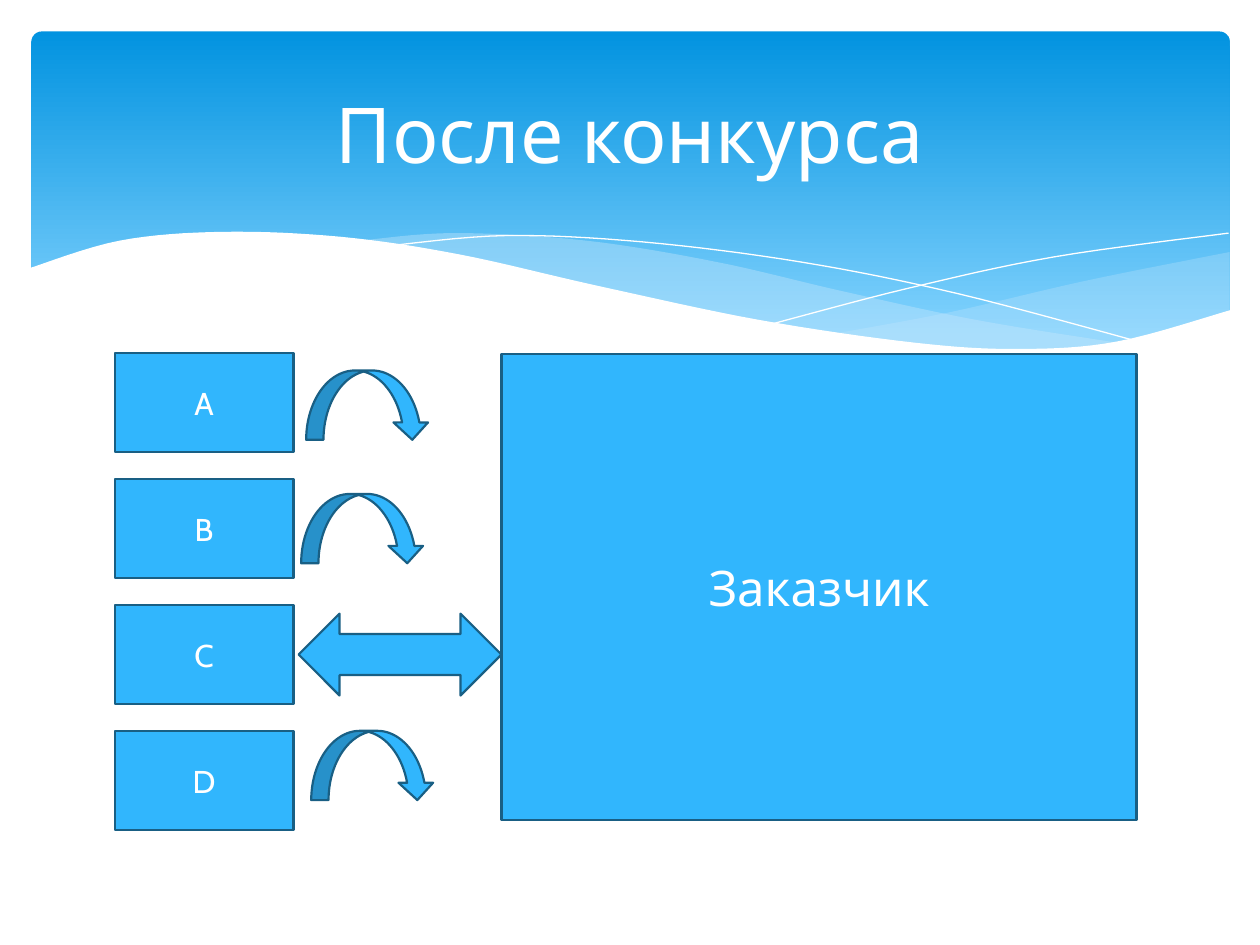
from dataclasses import dataclass
from typing import Optional

from lxml.etree import SubElement as Sub
from pptx import Presentation as Deck
from pptx.dml.color import RGBColor as Rgb
from pptx.enum.shapes import MSO_SHAPE as Kind
from pptx.enum.text import MSO_ANCHOR as Anchor, PP_ALIGN as Align
from pptx.oxml.ns import qn
from pptx.util import Inches, Pt


@dataclass(frozen=True)
class Theme:
    font: str = "Cabin"
    white: str = "FFFFFF"
    fill: str = "31B6FD"
    edge: str = "195F84"
    mist: str = "C6E7FC"
    top: str = "0293E0"
    base: str = "83D3FE"
    title: int = 44
    large: int = 28
    body: int = 18
    line: float = 1.25


@dataclass(frozen=True)
class Item:
    kind: Kind
    left: float
    top: float
    width: float
    height: float
    text: str = ""
    size: int = 18


@dataclass(frozen=True)
class Wave:
    knots: tuple
    floor: Optional[float] = None
    fill: str = ""
    alpha: int = 100


THEME = Theme()
STEPS = 8

WAVES = [
    Wave(((6.61, 2.65), (7.53, 2.48), (8.61, 2.23), (9.76, 2)),
         2.78, THEME.mist, 29),
    Wave(((2.86, 1.91), (3.61, 1.85), (4.65, 1.91), (5.69, 2.08),
          (6.68, 2.31), (7.75, 2.54), (8.93, 2.73)), 2.78, THEME.mist, 40),
    Wave(((3.09, 1.95), (4.01, 1.87), (5.1, 1.92), (6.36, 2.08),
          (7.6, 2.33), (9.07, 2.72))),
    Wave(((6.13, 2.57), (7.2, 2.29), (8.36, 2.04), (9.75, 1.85))),
    Wave(((0.23, 2.13), (0.95, 1.91), (1.77, 1.84), (2.71, 1.88),
          (3.65, 2.02), (4.75, 2.27), (6.03, 2.54), (7.26, 2.72),
          (8.09, 2.77), (8.87, 2.71), (9.77, 2.46)), 3.29, THEME.white),
]

ITEMS = [
    *(Item(Kind.RECTANGLE, 0.91, 2.8 + row, 1.42, 0.79, name, THEME.body)
      for row, name in enumerate("ABCD")),
    Item(Kind.RECTANGLE, 3.98, 2.81, 5.04, 3.7, "Заказчик", THEME.large),
    Item(Kind.LEFT_RIGHT_ARROW, 2.37, 4.87, 1.61, 0.65),
    *(Item(Kind.CURVED_DOWN_ARROW, left, top, 0.98, 0.55)
      for left, top in ((2.39, 3.92), (2.47, 5.8), (2.43, 2.94))),
]


def bend(a: float, b: float, c: float, d: float, t: float) -> float:
    return b + t / 2 * (c - a + t * (2 * a - 5 * b + 4 * c - d
                                     + t * (3 * (b - c) + d - a)))


def smooth(knots: tuple) -> list:
    ends = (knots[0], *knots, knots[-1])
    curve = [tuple(bend(*axis, step / STEPS) for axis in zip(*four))
             for four in zip(ends, ends[1:], ends[2:], ends[3:])
             for step in range(STEPS)]
    return [*curve, knots[-1]]


def paint(shape, color: str) -> None:
    shape.fill.solid()
    shape.fill.fore_color.rgb = Rgb.from_string(color)


def write(shape, text: str, size: int) -> None:
    frame = shape.text_frame
    frame.word_wrap = True
    frame.vertical_anchor = Anchor.MIDDLE
    para = frame.paragraphs[0]
    para.alignment = Align.CENTER
    run = para.add_run()
    run.text = text
    run.font.name = THEME.font
    run.font.size = Pt(size)
    run.font.color.rgb = Rgb.from_string(THEME.white)


def add_band(shapes) -> None:
    band = shapes.add_shape(Kind.ROUNDED_RECTANGLE, Inches(0.25), Inches(0.25),
                            Inches(9.51), Inches(2.7))
    band.adjustments[0] = 0.03
    band.shadow.inherit = False
    band.line.fill.background()
    band.fill.gradient()
    band.fill.gradient_angle = 270
    stops = ((0, THEME.top), (0.9, THEME.base))
    for stop, (place, color) in zip(band.fill.gradient_stops, stops):
        stop.position = place
        stop.color.rgb = Rgb.from_string(color)


def add_wave(shapes, wave: Wave) -> None:
    points = smooth(wave.knots)
    if wave.floor:
        points += [(wave.knots[end][0], wave.floor) for end in (-1, 0)]
    first, *rest = [(Inches(x), Inches(y)) for x, y in points]
    pen = shapes.build_freeform(*first)
    pen.add_line_segments(rest, close=bool(wave.fill))
    shape = pen.convert_to_shape()
    shape.shadow.inherit = False
    if not wave.fill:
        shape.fill.background()
        shape.line.color.rgb = Rgb.from_string(THEME.white)
        shape.line.width = Pt(0)
        return
    paint(shape, wave.fill)
    shape.line.fill.background()
    if wave.alpha < 100:
        color = shape.element.spPr.find(qn("a:solidFill"))[0]
        Sub(color, qn("a:alpha"), val=str(wave.alpha * 1000))


def add_item(shapes, item: Item) -> None:
    shape = shapes.add_shape(item.kind, Inches(item.left), Inches(item.top),
                             Inches(item.width), Inches(item.height))
    shape.shadow.inherit = False
    paint(shape, THEME.fill)
    shape.line.color.rgb = Rgb.from_string(THEME.edge)
    shape.line.width = Pt(THEME.line)
    if item.text:
        write(shape, item.text, item.size)


def main() -> None:
    deck = Deck()
    deck.slide_width, deck.slide_height = Inches(10), Inches(7.5)
    shapes = deck.slides.add_slide(deck.slide_layouts[6]).shapes
    add_band(shapes)
    for wave in WAVES:
        add_wave(shapes, wave)
    title = shapes.add_textbox(Inches(0.5), Inches(0.37), Inches(9), Inches(1.37))
    write(title, "После конкурса", THEME.title)
    for item in ITEMS:
        add_item(shapes, item)
    deck.save("out.pptx")


if __name__ == "__main__":
    main()
